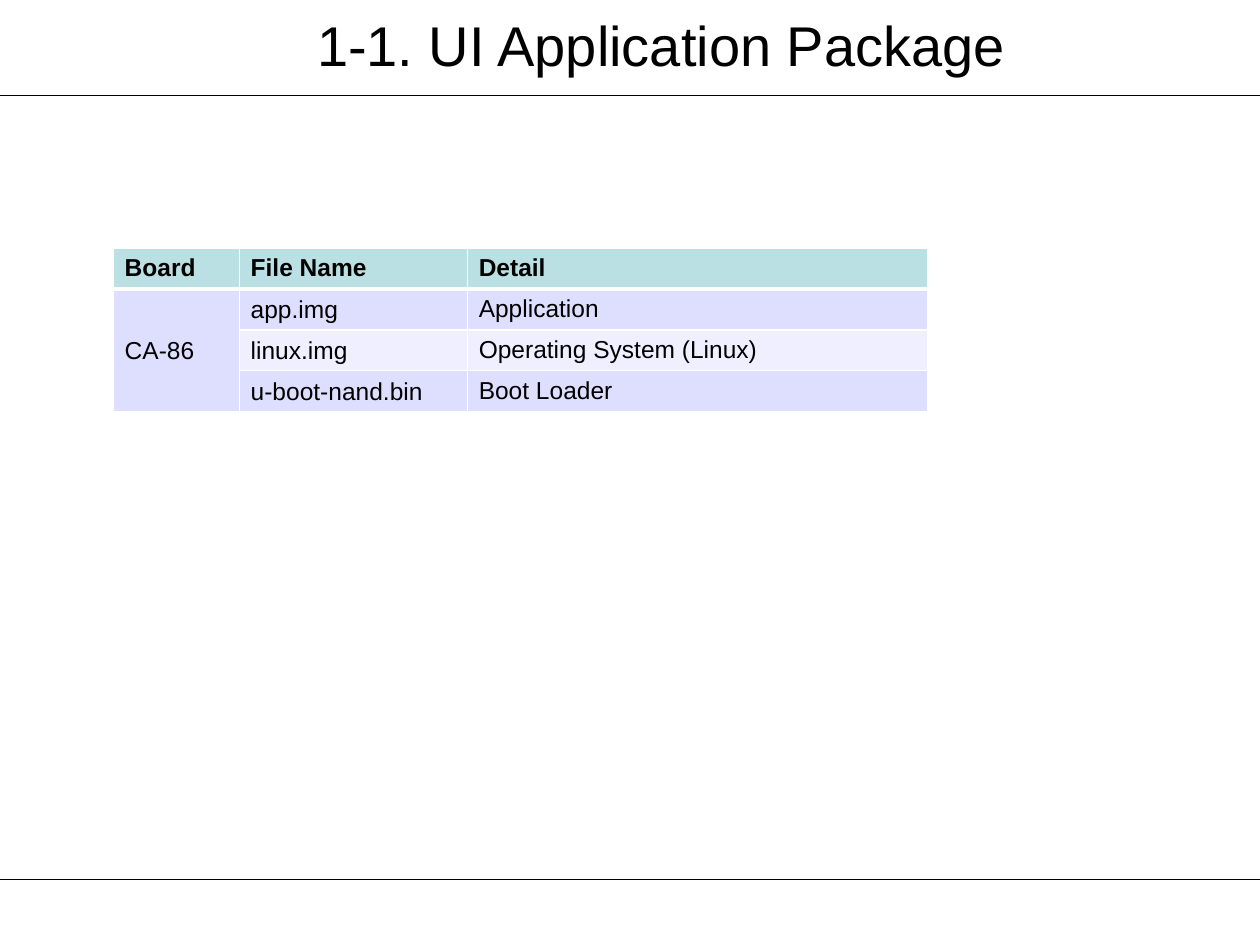
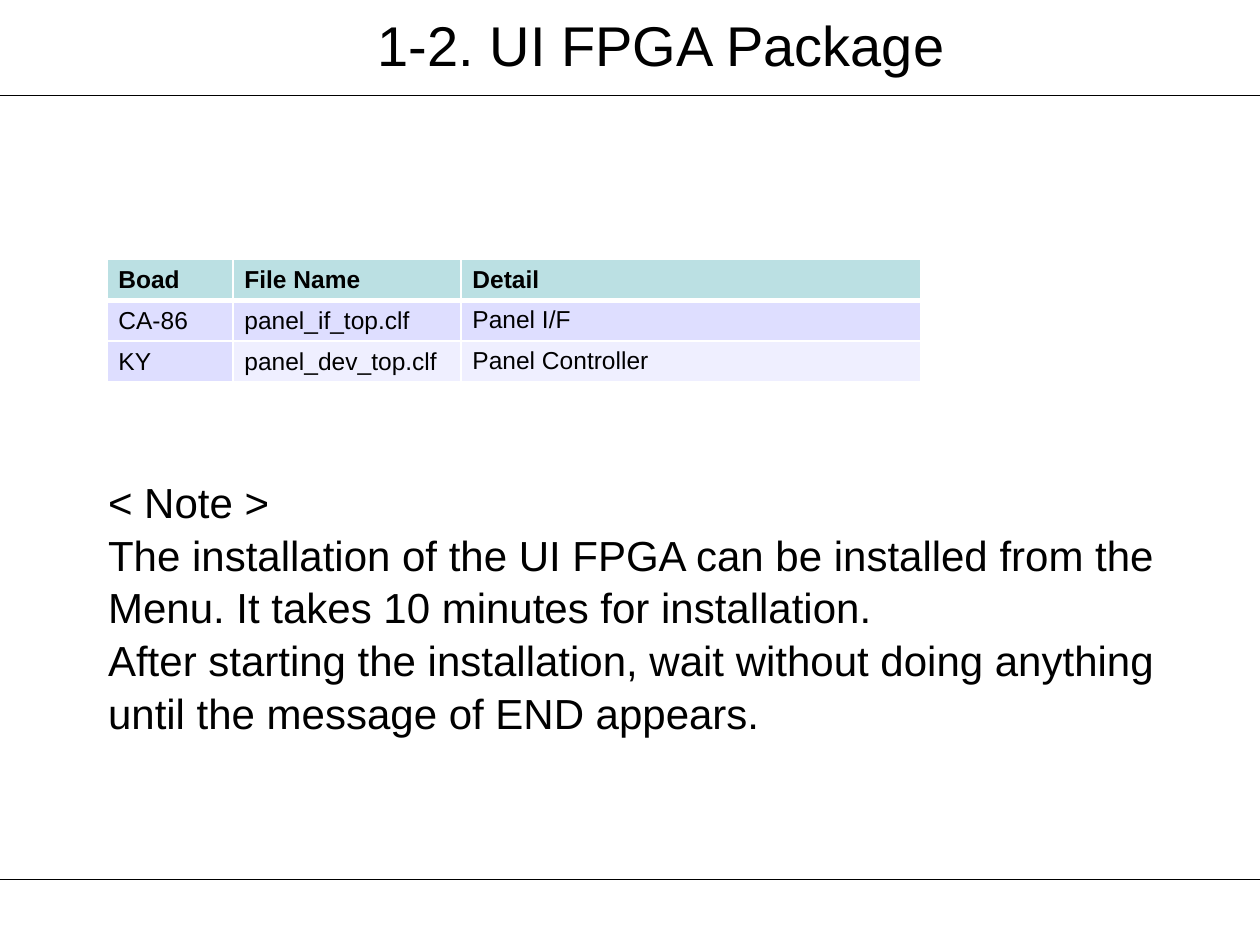
from lxml import etree
from pptx import Presentation
from pptx import util as u
from pptx.dml.color import RGBColor
from pptx.enum import shapes, text
from pptx.oxml.ns import qn

COLORS = {
    "ink": "000000",
    "grid": "FFFFFF",
    "header": "BBE0E3",
    "band": "DEDEFF",
    "light_band": "EFEFFF",
}
FONT = "Arial"
SLIDE_WIDTH, SLIDE_HEIGHT = 10, 7.5
RULE_HEIGHTS = (6.98, 0.76)
COLUMN_WIDTHS = (1, 1.81, 3.65)
ROW_HEIGHT = 0.32


def color(name):
    return RGBColor.from_string(COLORS[name])


def write(frame, *paragraphs, size, bold=False, align=None,
          anchor=text.MSO_ANCHOR.TOP, spacing=None):
    frame.word_wrap = True
    frame.vertical_anchor = anchor
    for index, words in enumerate(paragraphs):
        paragraph = frame.add_paragraph() if index else frame.paragraphs[0]
        paragraph.alignment = align
        paragraph.line_spacing = spacing
        run = paragraph.add_run()
        run.text = words
        run.font.name = FONT
        run.font.size = u.Pt(size)
        run.font.bold = bold
        run.font.color.rgb = color("ink")


def set_borders(cell, **widths):
    """Draw grid-coloured borders; each side defaults to 1 point."""
    properties = cell._tc.get_or_add_tcPr()
    for position, side in enumerate("LRTB"):
        border = etree.Element(qn(f"a:ln{side}"), w=str(u.Pt(widths.get(side, 1))))
        fill = etree.SubElement(border, qn("a:solidFill"))
        etree.SubElement(fill, qn("a:srgbClr"), val=COLORS["grid"])
        properties.insert(position, border)


class Deck:
    def __init__(self):
        self.presentation = Presentation()
        self.presentation.slide_width = u.Inches(SLIDE_WIDTH)
        self.presentation.slide_height = u.Inches(SLIDE_HEIGHT)
        self.slide = None

    def new_slide(self, title):
        blank = self.presentation.slide_layouts[6]
        self.slide = self.presentation.slides.add_slide(blank)
        for height in RULE_HEIGHTS:
            self.rule(height)
        heading = self.text_box(0.75, 0, 9, 0.76, title, size=32,
                                align=text.PP_ALIGN.CENTER,
                                anchor=text.MSO_ANCHOR.MIDDLE)
        heading.margin_bottom = u.Inches(0.11)

    def rule(self, height):
        line = self.slide.shapes.add_connector(
            shapes.MSO_CONNECTOR.STRAIGHT, 0, u.Inches(height),
            u.Inches(SLIDE_WIDTH), u.Inches(height))
        line.line.color.rgb = color("ink")
        line.line.width = u.Pt(0.75)
        etree.SubElement(line._element.spPr, qn("a:effectLst"))

    def text_box(self, left, top, width, height, *paragraphs, **style):
        box = self.slide.shapes.add_textbox(
            *map(u.Inches, (left, top, width, height)))
        write(box.text_frame, *paragraphs, **style)
        return box.text_frame

    def file_table(self, left, top, rows):
        """Add a file list; a None board continues the board above it."""
        table = self.slide.shapes.add_table(
            len(rows), len(COLUMN_WIDTHS), u.Inches(left), u.Inches(top),
            u.Inches(sum(COLUMN_WIDTHS)), u.Inches(ROW_HEIGHT * len(rows))).table
        for column, width in zip(table.columns, COLUMN_WIDTHS):
            column.width = u.Inches(width)
        for row_index, row in enumerate(rows):
            table.rows[row_index].height = u.Inches(ROW_HEIGHT)
            for column_index, words in enumerate(row):
                self.file_cell(table.cell(row_index, column_index), words,
                               row_index, column_index)
        board_row = 1
        for row_index in range(2, len(rows) + 1):
            if row_index == len(rows) or rows[row_index][0]:
                if row_index - board_row > 1:
                    table.cell(board_row, 0).merge(table.cell(row_index - 1, 0))
                board_row = row_index

    def file_cell(self, cell, words, row_index, column_index):
        is_header = row_index == 0
        if is_header:
            shade = "header"
        elif column_index == 0 or row_index % 2:
            shade = "band"
        else:
            shade = "light_band"
        cell.fill.solid()
        cell.fill.fore_color.rgb = color(shade)
        cell.margin_left = cell.margin_right = u.Inches(0.09)
        cell.margin_top, cell.margin_bottom = u.Inches(0.05), u.Inches(0.04)
        set_borders(cell, T=3 if row_index == 1 else 1, B=3 if is_header else 1)
        if words:
            write(cell.text_frame, words, size=14, bold=is_header)
            if not is_header and column_index < 2:
                cell.vertical_anchor = text.MSO_ANCHOR.MIDDLE


def main():
    deck = Deck()

    deck.new_slide("1-1. UI Application Package")
    deck.file_table(0.9, 1.97, [
        ("Board", "File Name", "Detail"),
        ("CA-86", "app.img", "Application"),
        (None, "linux.img", "Operating System (Linux)"),
        (None, "u-boot-nand.bin", "Boot Loader"),
    ])

    deck.new_slide("1-2. UI FPGA Package")
    deck.file_table(0.85, 2.06, [
        ("Boad", "File Name", "Detail"),
        ("CA-86", "panel_if_top.clf", "Panel I/F"),
        ("KY", "panel_dev_top.clf", "Panel Controller"),
    ])
    deck.text_box(
        0.76, 3.71, 8.74, 2.52,
        "< Note >",
        "The installation of the UI FPGA can be installed from the Menu. "
        "It takes 10 minutes for installation.",
        "After starting the installation, wait without doing anything "
        "until the message of END appears.",
        size=24, spacing=1.05)

    deck.presentation.save("out.pptx")


if __name__ == "__main__":
    main()
